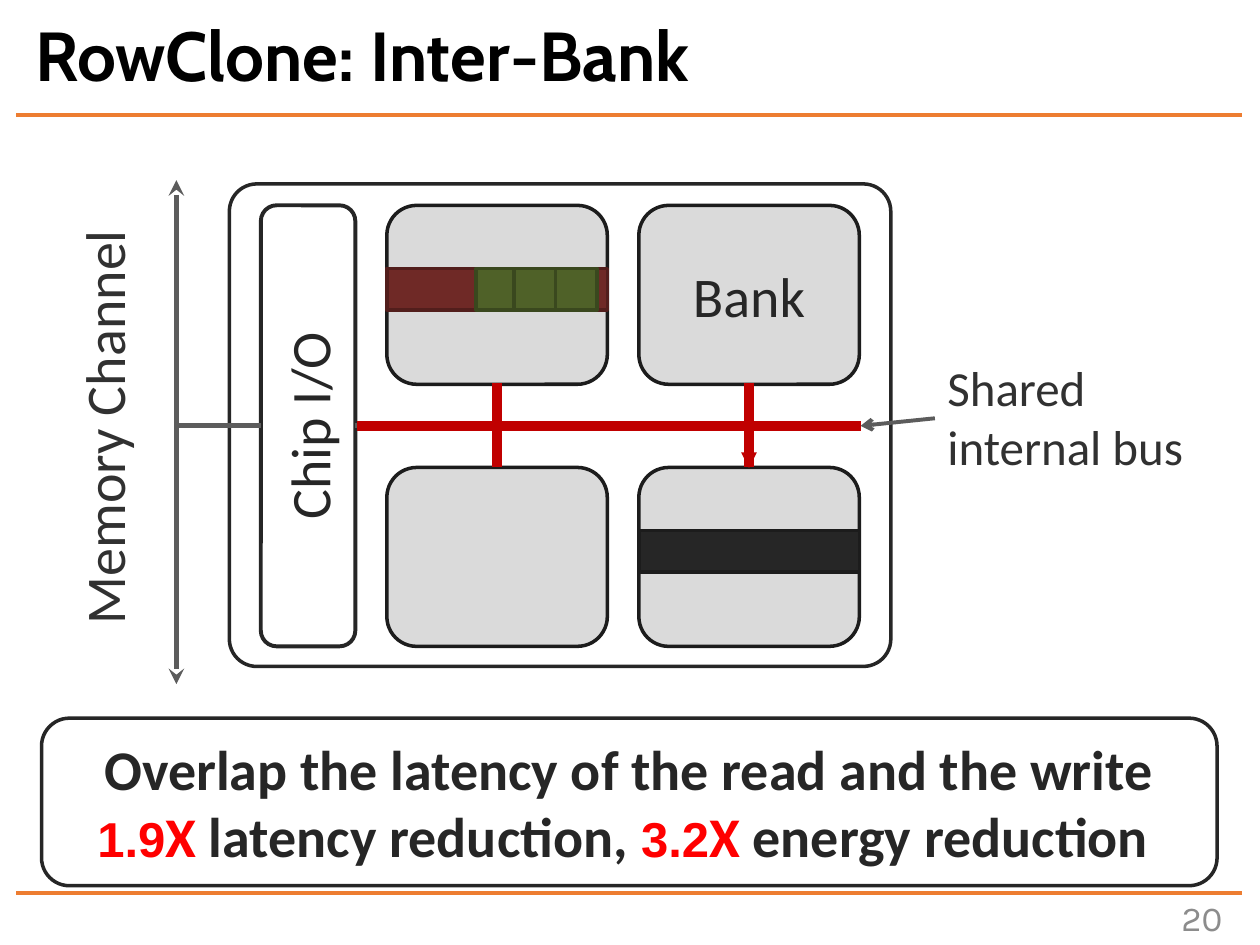
from lxml.etree import SubElement
from pptx import Presentation
from pptx.dml.color import RGBColor
from pptx.enum.shapes import MSO_CONNECTOR, MSO_SHAPE
from pptx.enum.text import MSO_ANCHOR, PP_ALIGN
from pptx.oxml.ns import qn
from pptx.util import Inches, Pt

COLORS = {
    "black": "000000", "white": "FFFFFF", "ink": "262626", "edge": "1C1C1C",
    "label": "313131", "wire": "5C5C5C", "bank": "DADADA", "bus": "C00000",
    "rule": "ED7D31", "number": "8C8C8C", "red": "FF0000",
    "source row": "6F2926", "source edge": "521E1C",
    "cell": "4F6128", "cell edge": "3A481E",
}

# A run is (text, size, font, color, bold)
TITLE = [[("RowClone: Inter-Bank", 39.6, "Cabin", "black", True)]]
PAGE_NUMBER = [[("20", 20, "Karla", "number", False)]]
CHANNEL = [[("Memory Channel", 32, "Calibri", "label", False)]]
CHIP_IO = [[("Chip I/O", 32, "Calibri", "ink", False)]]
BANK = [[("Bank", 32, "Calibri", "ink", False)]]
BUS_LABEL = [[("Shared internal bus", 28, "Calibri", "label", False)]]
SUMMARY = [
    [("Overlap the latency of the read and the write", 32, "Calibri", "ink", True)],
    [
        ("1.9", 28, "Arial", "red", True),
        ("X", 32, "Calibri", "red", True),
        (" latency reduction, ", 32, "Calibri", "ink", True),
        ("3.2", 28, "Arial", "red", True),
        ("X", 32, "Calibri", "red", True),
        (" energy reduction ", 32, "Calibri", "ink", True),
    ],
]

BANK_LEFTS = (3.07, 5.07)
BANK_TOPS = (1.63, 3.71)
BANK_WIDTH, BANK_HEIGHT = 1.75, 1.42
ROW_OFFSET, ROW_HEIGHT = 0.5, 0.33
CELL_LEFTS = (3.78, 4.08, 4.41)
BUS_Y = 3.38
STUB_TOP, STUB_BOTTOM = 3.04, 3.71
STUB_XS = [left + BANK_WIDTH / 2 for left in BANK_LEFTS]

deck = Presentation()
deck.slide_width, deck.slide_height = Inches(10), Inches(7.5)
page = deck.slides.add_slide(deck.slide_layouts[6])


def rgb(name):
    return RGBColor.from_string(COLORS[name])


def write(shape, paragraphs, align=PP_ALIGN.LEFT, anchor=MSO_ANCHOR.MIDDLE, wrap=True):
    frame = shape.text_frame
    frame.word_wrap = wrap
    frame.vertical_anchor = anchor
    for index, runs in enumerate(paragraphs):
        para = frame.add_paragraph() if index else frame.paragraphs[0]
        para.alignment = align
        for text, size, font, color, bold in runs:
            span = para.add_run()
            span.text = text
            span.font.size, span.font.name, span.font.bold = Pt(size), font, bold
            span.font.color.rgb = rgb(color)


def add_text(bounds, paragraphs, **layout):
    box = page.shapes.add_textbox(*map(Inches, bounds))
    write(box, paragraphs, **layout)
    return box


def add_block(bounds, fill, line, width=2, kind=MSO_SHAPE.ROUNDED_RECTANGLE):
    block = page.shapes.add_shape(kind, *map(Inches, bounds))
    block.shadow.inherit = False
    block.fill.solid()
    block.fill.fore_color.rgb = rgb(fill)
    block.line.color.rgb = rgb(line)
    block.line.width = Pt(width)
    return block


def add_line(start, end, color, width, head=None, tail=None, kind=MSO_CONNECTOR.STRAIGHT):
    """Draw a connector; head is the arrowhead at start, tail the one at end."""
    line = page.shapes.add_connector(kind, *map(Inches, start + end))
    line.line.color.rgb = rgb(color)
    line.line.width = Pt(width)
    properties = line._element.spPr
    outline = properties.find(qn("a:ln"))
    for tag, arrow in (("a:headEnd", head), ("a:tailEnd", tail)):
        if arrow:
            SubElement(outline, qn(tag), type=arrow)
    SubElement(properties, qn("a:effectLst"))
    return line


def add_row(left, top, width, fill, line):
    add_block((left, top, width, ROW_HEIGHT), fill, line, kind=MSO_SHAPE.RECTANGLE)


# Frame of the page
add_text((8.72, 7.08, 1.08, 0.4), PAGE_NUMBER, align=PP_ALIGN.RIGHT)
for y in (0.91, 7.09):
    add_line((0.13, y), (9.86, y), "rule", 2.25)

# Chip, memory channel and chip I/O
chip = add_block((1.82, 1.46, 5.25, 3.83), "white", "ink")
chip.adjustments[0] = 0.057
add_line((1.4, 1.43), (1.4, 5.43), "wire", 3, head="stealth", tail="stealth")
channel = add_text((-0.86, 3.07, 3.36, 0.64), CHANNEL, align=PP_ALIGN.CENTER,
                   anchor=MSO_ANCHOR.TOP, wrap=False)
channel.rotation = 270
chip_io = add_block((2.07, 1.63, 0.75, 3.5), "white", "ink", 2.25)
write(chip_io, CHIP_IO, align=PP_ALIGN.CENTER)
chip_io.text_frame._txBody.bodyPr.set("vert", "vert270")
add_line((2.07, BUS_Y), (1.4, BUS_Y), "wire", 3)

# Banks
banks = [
    add_block((left, top, BANK_WIDTH, BANK_HEIGHT), "bank", "edge")
    for top in BANK_TOPS for left in BANK_LEFTS
]
write(banks[1], BANK, align=PP_ALIGN.CENTER)

# Internal bus, with the active transfer on top
for color, width, bus_left in (("wire", 3, 2.82), ("bus", 6, 2.83)):
    add_line((bus_left + 4, BUS_Y), (bus_left, BUS_Y), color, width)
    for x in reversed(STUB_XS):
        add_line((x, STUB_TOP), (x, STUB_BOTTOM), color, width)
add_text((7.42, 2.79, 2.25, 1.04), BUS_LABEL, anchor=MSO_ANCHOR.TOP)
add_line((7.42, 3.32), (6.83, BUS_Y), "wire", 2.25, tail="arrow")

# Source and destination rows
source_top, target_top = (top + ROW_OFFSET for top in BANK_TOPS)
add_row(BANK_LEFTS[0], source_top, BANK_WIDTH, "source row", "source edge")
add_row(BANK_LEFTS[1], target_top, BANK_WIDTH, "ink", "edge")

# Transfer path: a flipped elbow turned a quarter so that it starts downwards
transfer = add_line((5.28, 2.38), (4.61, 4.38), "bus", 3, tail="triangle",
                    kind=MSO_CONNECTOR.ELBOW)
transfer._element.spPr.find(qn("a:xfrm")).set("rot", str(270 * 60000))

for left in CELL_LEFTS:
    add_row(left, source_top, ROW_HEIGHT, "cell", "cell edge")

# Summary and title
summary = add_block((0.33, 5.7, 9.33, 1.33), "white", "ink")
write(summary, SUMMARY, align=PP_ALIGN.CENTER)
title = add_text((0.18, 0.14, 9.73, 0.66), TITLE)
title.text_frame.paragraphs[0].line_spacing = 0.9

deck.save("out.pptx")
